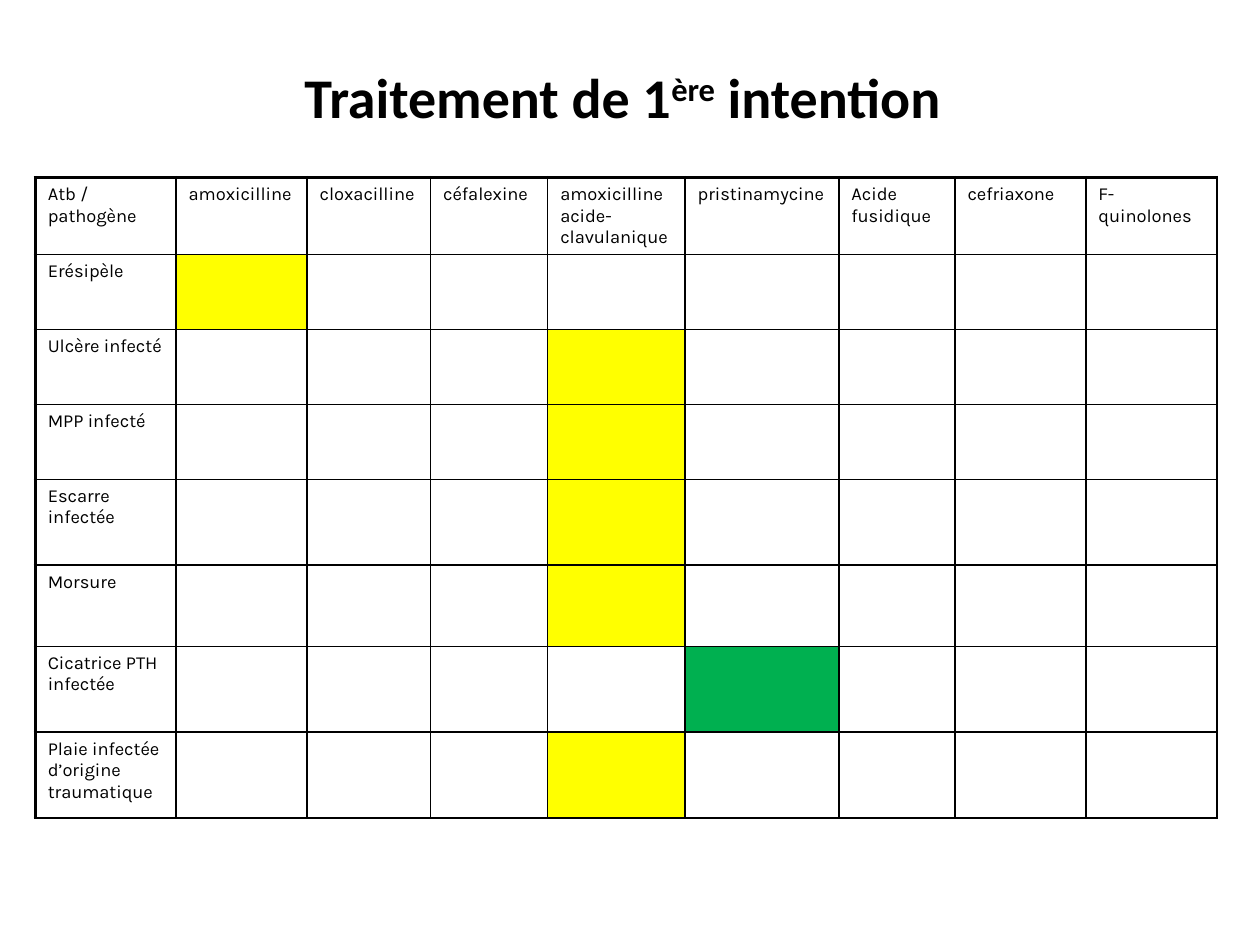
from dataclasses import dataclass

from lxml.etree import SubElement
from pptx import Presentation
from pptx.dml.color import RGBColor
from pptx.enum.text import MSO_ANCHOR, PP_ALIGN
from pptx.oxml.ns import qn
from pptx.util import Cm, Pt


@dataclass(frozen=True)
class Theme:
    ink: str = "000000"
    paper: str = "FFFFFF"
    first_choice: str = "FFFF00"
    alternative: str = "00B050"
    title_font: str = "Calibri"
    table_font: str = "Karla"
    title_size: float = 32
    table_size: float = 10.5
    thin: float = 1
    thick: float = 2.25


def write(paragraph, text, *, font, size, color, bold=False, baseline=None):
    run = paragraph.add_run()
    run.text = text
    run.font.name = font
    run.font.size = Pt(size)
    run.font.bold = bold
    run.font.color.rgb = RGBColor.from_string(color)
    if baseline:
        run.font._element.set("baseline", str(baseline * 1000))


def draw_border(cell, side, width, color):
    line = SubElement(cell._tc.get_or_add_tcPr(), qn(f"a:ln{side}"), w=str(Pt(width)))
    fill = SubElement(line, qn("a:solidFill"))
    SubElement(fill, qn("a:srgbClr"), val=color)


def space_before(paragraph, percent):
    spacing = SubElement(paragraph._p.get_or_add_pPr(), qn("a:spcBef"))
    SubElement(spacing, qn("a:spcPct"), val=str(percent * 1000))


class SlideBuilder:
    def __init__(self, slide, theme):
        self.slide = slide
        self.theme = theme

    def title(self, pieces, left, top, width, height):
        heading = self.slide.shapes.add_textbox(left, top, width, height).text_frame
        heading.word_wrap = True
        heading.vertical_anchor = MSO_ANCHOR.MIDDLE
        sentence = heading.paragraphs[0]
        sentence.alignment = PP_ALIGN.CENTER
        for text, baseline in pieces:
            write(sentence, text, font=self.theme.title_font, size=self.theme.title_size,
                  color=self.theme.ink, bold=True, baseline=baseline)

    def treatment_table(self, antibiotics, pathogens, choices, left, top, widths, heights):
        frame = self.slide.shapes.add_table(
            len(heights), len(widths), left, top, sum(widths), sum(heights))
        grid = frame.table
        grid.first_row = grid.horz_banding = False
        for column, width in zip(grid.columns, widths):
            column.width = width
        for row, height in zip(grid.rows, heights):
            row.height = height
        for r in range(len(heights)):
            for c in range(len(widths)):
                label = antibiotics[c] if r == 0 else pathogens[r - 1] if c == 0 else ""
                color = choices.get((label_of(pathogens, r), antibiotics[c]), self.theme.paper)
                self.treatment_cell(grid.cell(r, c), label, color, r == 0, c == 0)

    def treatment_cell(self, cell, label, color, is_top, is_left):
        theme = self.theme
        for side, is_outer in (("L", is_left), ("R", False), ("T", is_top), ("B", False)):
            draw_border(cell, side, theme.thick if is_outer else theme.thin, theme.ink)
        cell.fill.solid()
        cell.fill.fore_color.rgb = RGBColor.from_string(color)
        if label:
            paragraph = cell.text_frame.paragraphs[0]
            space_before(paragraph, 20)
            write(paragraph, label, font=theme.table_font, size=theme.table_size,
                  color=theme.ink)


def label_of(pathogens, row):
    return pathogens[row - 1] if row else None


def main():
    theme = Theme()
    deck = Presentation()
    deck.slide_width, deck.slide_height = Cm(25.4), Cm(19.05)
    builder = SlideBuilder(deck.slides.add_slide(deck.slide_layouts[6]), theme)

    antibiotics = [
        "Atb / pathogène", "amoxicilline", "cloxacilline", "céfalexine",
        "amoxicilline acide-clavulanique", "pristinamycine", "Acide fusidique",
        "cefriaxone", "F-quinolones",
    ]
    pathogens = [
        "Erésipèle", "Ulcère infecté", "MPP infecté", "Escarre infectée", "Morsure",
        "Cicatrice PTH infectée", "Plaie infectée d’origine traumatique",
    ]
    combined = "amoxicilline acide-clavulanique"
    choices = {
        (pathogen, combined): theme.first_choice
        for pathogen in pathogens
        if pathogen not in ("Erésipèle", "Cicatrice PTH infectée")
    }
    choices["Erésipèle", "amoxicilline"] = theme.first_choice
    choices["Cicatrice PTH infectée", "pristinamycine"] = theme.alternative

    builder.treatment_table(
        antibiotics, pathogens, choices, Cm(0.71), Cm(3.58),
        [Cm(w) for w in (2.84, 2.64, 2.49, 2.36, 2.77, 3.1, 2.34, 2.64, 2.64)],
        [Cm(h) for h in (1.37, 1.51, 1.51, 1.51, 1.73, 1.64, 1.73, 1.73)],
    )
    builder.title(
        [("Traitement de 1", None), ("ère", 30), (" intention", None)],
        Cm(0), Cm(0.71), Cm(25.1), Cm(2.46),
    )
    deck.save("out.pptx")


if __name__ == "__main__":
    main()
